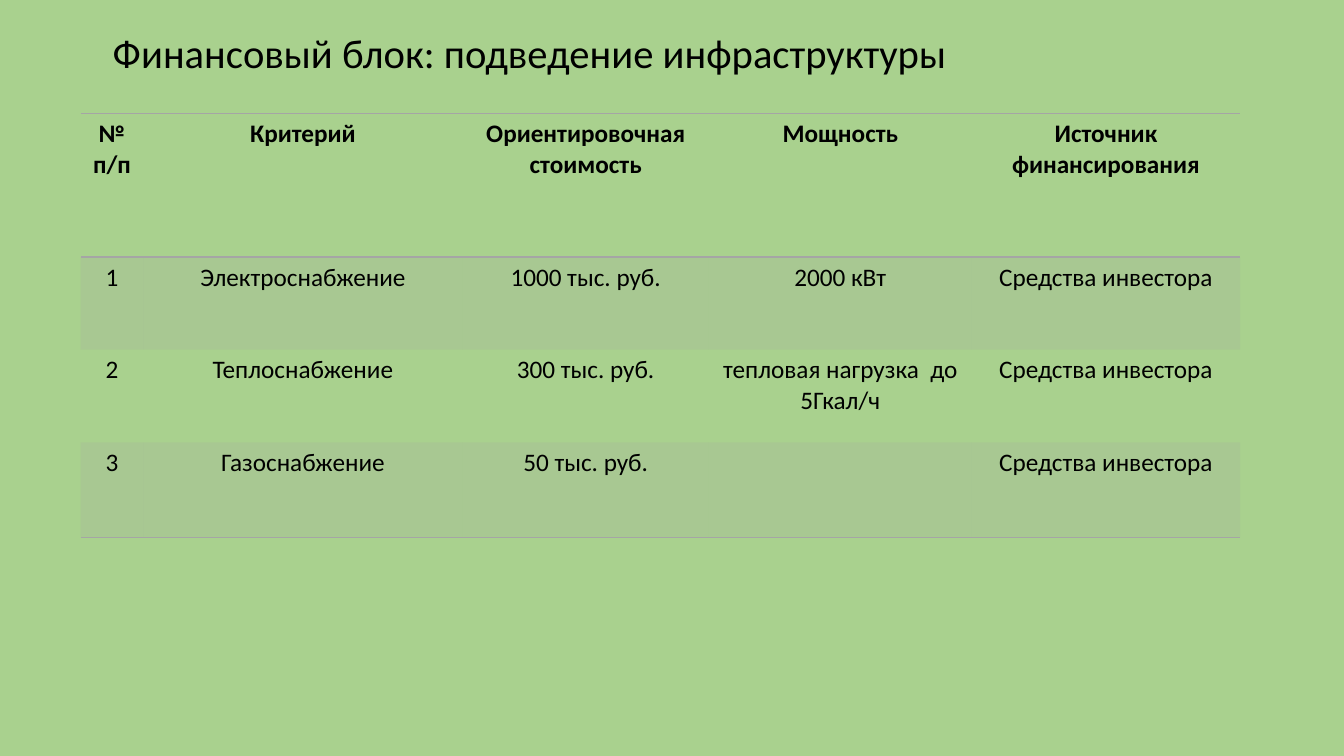
from dataclasses import dataclass

from lxml import etree
from pptx import Presentation
from pptx.dml.color import RGBColor
from pptx.enum.text import MSO_ANCHOR, PP_ALIGN
from pptx.oxml.ns import qn
from pptx.util import Inches, Pt

MIDDLE = MSO_ANCHOR.MIDDLE
CENTER = PP_ALIGN.CENTER
LEFT = PP_ALIGN.LEFT
BLANK = 6
WIDE, HIGH = 13.33, 7.5


@dataclass(frozen=True)
class Theme:
    font: str = "Calibri"
    back: str = "A9D18E"
    ink: str = "000000"
    gray: str = "A5A5A5"
    tint: int = 20
    head: int = 29
    body: int = 18
    rule: int = 1


class Board:
    def __init__(self, deck, theme):
        self.theme = theme
        self.slide = deck.slides.add_slide(deck.slide_layouts[BLANK])
        fill = self.slide.background.fill
        fill.solid()
        fill.fore_color.rgb = RGBColor.from_string(theme.back)

    def place(self, x, y, w, h):
        return [Inches(x * WIDE), Inches(y * HIGH), Inches(w * WIDE), Inches(h * HIGH)]

    def label(self, frame, text, size, bold=False, align=LEFT):
        frame.text = text
        for para in frame.paragraphs:
            para.alignment = align
            for run in para.runs:
                run.font.name = self.theme.font
                run.font.size = Pt(size)
                run.font.bold = bold
                run.font.color.rgb = RGBColor.from_string(self.theme.ink)

    def title(self, text, box):
        frame = self.slide.shapes.add_textbox(*self.place(*box)).text_frame
        frame.word_wrap = True
        frame.vertical_anchor = MIDDLE
        self.label(frame, text, self.theme.head)
        frame.paragraphs[0].line_spacing = 0.9

    def edge(self, cell, ruled):
        props = cell._tc.get_or_add_tcPr()
        for spot, side in enumerate("LRTB"):
            line = etree.Element(qn(f"a:ln{side}"), w=str(Pt(self.theme.rule)))
            props.insert(spot, line)
            if side in ruled:
                paint = etree.SubElement(line, qn("a:solidFill"))
                etree.SubElement(paint, qn("a:srgbClr"), val=self.theme.gray)
            else:
                etree.SubElement(line, qn("a:noFill"))

    def shade(self, cell, band):
        if not band:
            cell.fill.background()
            return
        cell.fill.solid()
        cell.fill.fore_color.rgb = RGBColor.from_string(self.theme.gray)
        color = cell._tc.tcPr.find(".//" + qn("a:srgbClr"))
        etree.SubElement(color, qn("a:alpha"), val=str(self.theme.tint * 1000))

    def table(self, rows, box, wides, highs):
        last = len(rows) - 1
        shape = self.slide.shapes.add_table(len(rows), len(wides), *self.place(*box))
        grid = shape.table
        grid.horz_banding = False
        for col, wide in zip(grid.columns, wides):
            col.width = Inches(wide * WIDE)
        for r, (row, high) in enumerate(zip(rows, highs)):
            grid.rows[r].height = Inches(high * HIGH)
            ruled = ("T" if r < 2 else "") + ("B" if r in (0, last) else "")
            for c, text in enumerate(row):
                cell = grid.cell(r, c)
                self.label(cell.text_frame, text, self.theme.body, r == 0, CENTER)
                self.shade(cell, r % 2 == 1)
                self.edge(cell, ruled)


def main():
    deck = Presentation()
    deck.slide_width, deck.slide_height = Inches(WIDE), Inches(HIGH)
    board = Board(deck, Theme())
    board.title(
        "Финансовый блок: подведение инфраструктуры",
        (1.02 / WIDE, 0.13 / HIGH, 11.5 / WIDE, 0.84 / HIGH),
    )
    fund = "Средства инвестора"
    rows = [
        ("№ п/п", "Критерий", "Ориентировочная стоимость", "Мощность", "Источник финансирования"),
        ("1", "Электроснабжение", "1000 тыс. руб.", "2000 кВт", fund),
        ("2", "Теплоснабжение", "300 тыс. руб.", "тепловая нагрузка  до 5Гкал/ч", fund),
        ("3", "Газоснабжение", "50 тыс. руб.", "", fund),
    ]
    wides = [w / WIDE for w in (0.62, 3.17, 2.44, 2.61, 2.66)]
    highs = [h / HIGH for h in (1.42, 0.92, 0.92, 0.94)]
    board.table(rows, (0.8 / WIDE, 1.13 / HIGH, sum(wides), sum(highs)), wides, highs)
    deck.save("out.pptx")


if __name__ == "__main__":
    main()
